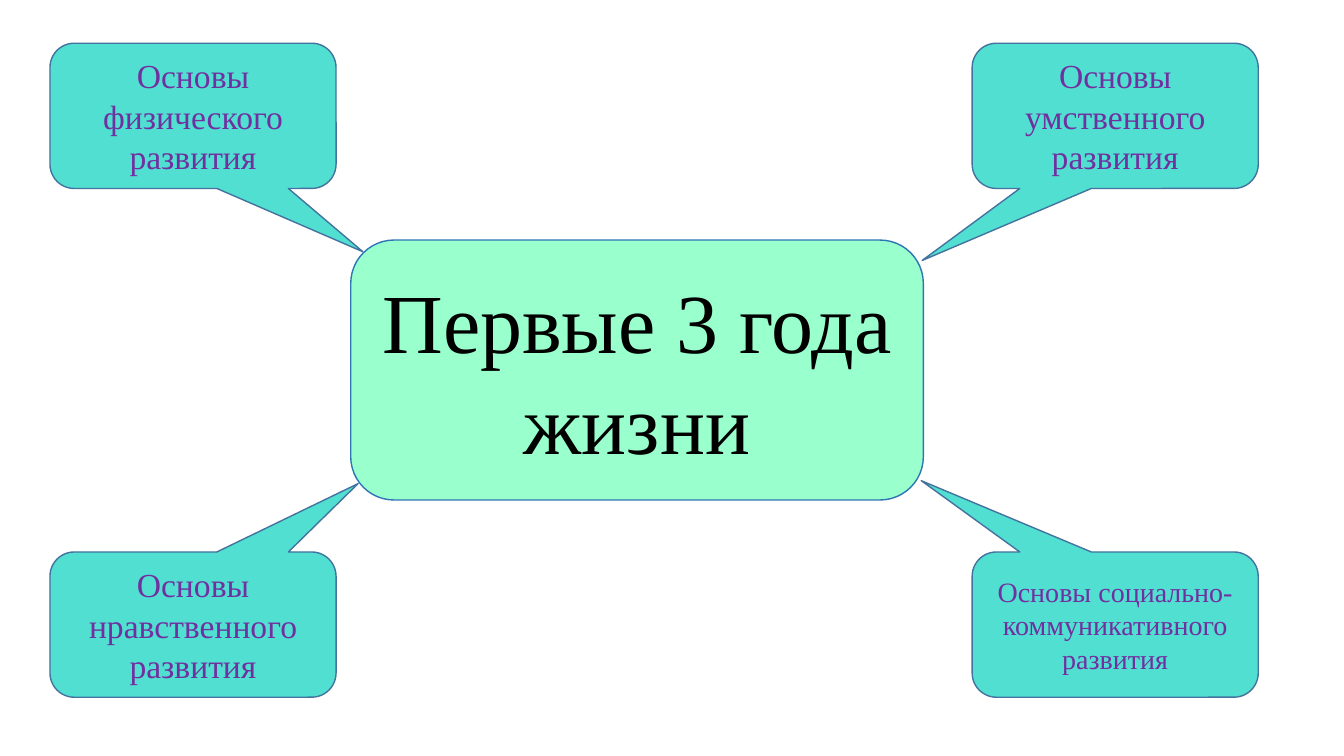
from pptx import Presentation
from pptx.dml.color import RGBColor
from pptx.enum.shapes import MSO_SHAPE as SHAPE
from pptx.enum.text import MSO_ANCHOR as ANCHOR, PP_ALIGN as ALIGN
from pptx.util import Cm, Pt

COLORS = {
    "center": "99FFCC", "center_line": "2E75B6", "title": "000000",
    "callout": "51DFD1", "callout_line": "43739E", "label": "7030A0",
}
LEFT, RIGHT, TOP, BOTTOM = 1.26, 24.5, 1.09, 13.91
CALLOUTS = [
    (LEFT, TOP, "Основы физического развития", 24, (0.594, 0.936)),
    (RIGHT, TOP, "Основы умственного развития", 24, (-0.675, 0.996)),
    (LEFT, BOTTOM, "Основы нравственного развития", 24, (0.577, -0.971)),
    (RIGHT, BOTTOM, "Основы социально-коммуникативного развития", 20, (-0.678, -0.991)),
]


def rgb(name):
    """Return the named colour."""
    return RGBColor.from_string(COLORS[name])


def add_text(sp, text, size=24, color="label", font="Times New Roman"):
    """Write one centred paragraph in a shape."""
    tf = sp.text_frame
    tf.word_wrap = True
    tf.vertical_anchor = ANCHOR.MIDDLE
    p = tf.paragraphs[0]
    p.alignment = ALIGN.CENTER
    r = p.add_run()
    r.text = text
    r.font.name = font
    r.font.size = Pt(size)
    r.font.color.rgb = rgb(color)


def add_box(s, kind, box, fill):
    """Add a filled, thinly outlined shape in the given box."""
    sp = s.shapes.add_shape(kind, *(Cm(v) for v in box))
    sp.shadow.inherit = False
    sp.fill.solid()
    sp.fill.fore_color.rgb = rgb(fill)
    sp.line.color.rgb = rgb(fill + "_line")
    sp.line.width = Pt(1)
    return sp


def add_center(s, box):
    """Place the central topic."""
    sp = add_box(s, SHAPE.ROUNDED_RECTANGLE, box, "center")
    add_text(sp, "Первые 3 года жизни", size=60, color="title")


def add_callout(s, box, text, size, tip):
    """Place a callout whose tip is offset from its centre by shares of its size."""
    sp = add_box(s, SHAPE.ROUNDED_RECTANGULAR_CALLOUT, box, "callout")
    sp.adjustments[0], sp.adjustments[1] = tip
    add_text(sp, text, size=size)


def main():
    """Build the slide and save it."""
    prs = Presentation()
    prs.slide_width, prs.slide_height = Cm(33.87), Cm(19.05)
    s = prs.slides.add_slide(prs.slide_layouts[6])
    add_center(s, (8.84, 6.05, 14.43, 6.55))
    for x, y, text, size, tip in CALLOUTS:
        add_callout(s, (x, y, 7.21, 3.66), text, size, tip)
    prs.save("out.pptx")


if __name__ == "__main__":
    main()
